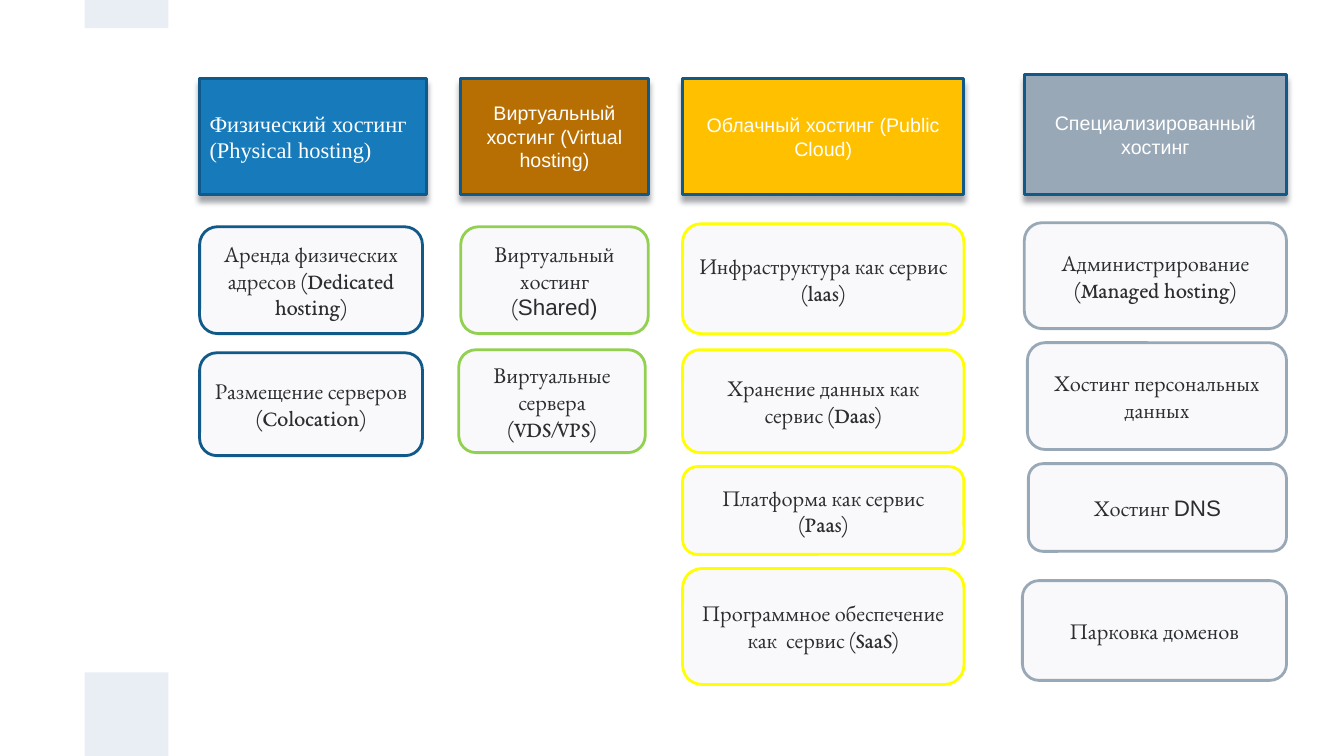
from dataclasses import dataclass

from lxml import etree
from pptx import Presentation
from pptx import util as u
from pptx.dml.color import RGBColor
from pptx.enum import shapes, text
from pptx.oxml.ns import qn

PX = 9144  # EMU in one px, 100 px to the inch


@dataclass(frozen=True)
class Theme:
    band: str = "E9EDF4"
    card: str = "F9F9FB"
    ink: str = "2C2D30"
    white: str = "FFFFFF"
    navy: str = "105988"
    blue: str = "177BBB"
    brown: str = "B76F04"
    amber: str = "FFC000"
    grey: str = "99A8B7"
    green: str = "92D050"
    yellow: str = "FFFF00"
    shadow: str = "70747C"
    sans: str = "Arial"
    serif: str = "EB Garamond"
    times: str = "Times New Roman"
    small: int = 14
    large: int = 16
    outline: int = 2


THEME = Theme()


@dataclass(frozen=True)
class Card:
    top: int  # measured from the top of the column
    height: int
    paragraphs: list  # each paragraph is a list of (text, font) runs
    indent: int = 0  # shift of the left edge
    trim: int = 0  # distance kept from the right edge


@dataclass(frozen=True)
class Column:
    box: tuple  # left, top, width, height of the heading
    heading: str
    fill: str
    outline: str
    cards: list
    font: str = THEME.sans
    size: int = THEME.small
    align: int = text.PP_ALIGN.CENTER


def serif(words):
    return words, THEME.serif


def sans(words):
    return words, THEME.sans


COLUMNS = [
    Column((198, 78, 225, 115), "Физический хостинг (Physical hosting)",
           THEME.blue, THEME.navy, [
               Card(147, 106, [[serif("Аренда физических адресов (Dedicated hosting)")]], trim=4),
               Card(272, 102, [[serif("Размещение серверов (Colocation)")]], trim=4),
           ], font=THEME.times, size=THEME.large, align=text.PP_ALIGN.LEFT),
    Column((457, 78, 186, 115), "Виртуальный хостинг (Virtual hosting)",
           THEME.brown, THEME.green, [
               Card(147, 106, [[serif("Виртуальный хостинг ("), sans("Shared)")]]),
               Card(269, 102, [[serif("Виртуальные сервера (VDS/VPS)")]], indent=-2, trim=3),
           ]),
    Column((677, 78, 279, 115), "Облачный хостинг (Public Cloud)",
           THEME.amber, THEME.yellow, [
               Card(144, 109, [[serif("Инфраструктура как сервис (laas)")]]),
               Card(269, 102, [[serif("Хранение данных как сервис (Daas)")]]),
               Card(385, 87, [[serif("Платформа как сервис (Paas)")]]),
               Card(486, 115, [[serif("Программное обеспечение как  сервис (SaaS)")]]),
           ]),
    Column((1016, 74, 260, 119), "Специализированный хостинг",
           THEME.grey, THEME.grey, [
               Card(147, 105, [[serif("Администрирование")], [serif("(Managed hosting)")]]),
               Card(266, 106, [[serif("Хостинг персональных данных")]], indent=3),
               Card(386, 87, [[serif("Хостинг "), sans("DNS")]], indent=4),
               Card(502, 99, [[serif("Парковка доменов")]], indent=-2),
           ]),
]


def add_box(slide, kind, box, fill, outline=None):
    shape = slide.shapes.add_shape(kind, *(length * PX for length in box))
    shape.shadow.inherit = False
    shape.fill.solid()
    shape.fill.fore_color.rgb = RGBColor.from_string(fill)
    if outline:
        shape.line.color.rgb = RGBColor.from_string(outline)
        shape.line.width = u.Pt(THEME.outline)
    else:
        shape.line.fill.background()
    return shape


def add_shadow(shape):
    effects = shape._element.spPr.find(qn("a:effectLst"))
    shadow = etree.SubElement(effects, qn("a:outerShdw"), blurRad=str(u.Pt(4)),
                              dist=str(u.Pt(4)), dir="5400000", rotWithShape="0")
    color = etree.SubElement(shadow, qn("a:srgbClr"), val=THEME.shadow)
    etree.SubElement(color, qn("a:alpha"), val="63000")


def write_text(shape, paragraphs, *, size, color, align=text.PP_ALIGN.CENTER):
    frame = shape.text_frame
    frame.word_wrap = True
    frame.vertical_anchor = text.MSO_ANCHOR.MIDDLE
    frame.margin_left = frame.margin_right = 10 * PX
    frame.margin_top = frame.margin_bottom = 5 * PX
    for index, runs in enumerate(paragraphs):
        paragraph = frame.add_paragraph() if index else frame.paragraphs[0]
        paragraph.alignment = align
        for words, font in runs:
            run = paragraph.add_run()
            run.text = words
            run.font.name = font
            run.font.size = u.Pt(size)
            run.font.color.rgb = RGBColor.from_string(color)


def add_bands(slide, box):
    """Pale blocks at the top and bottom of a vertical strip."""
    left, top, width, height = box
    for band_top, band_height in ((top, 28), (top + height - 83, 83)):
        add_box(slide, shapes.MSO_SHAPE.RECTANGLE,
                (left, band_top, width, band_height), THEME.band)


def add_column(slide, column):
    left, top, width, _ = column.box

    # Heading
    heading = add_box(slide, shapes.MSO_SHAPE.RECTANGLE, column.box, column.fill, THEME.navy)
    add_shadow(heading)
    write_text(heading, [[(column.heading, column.font)]], size=column.size,
               color=THEME.white, align=column.align)

    # Cards below the heading
    for card in column.cards:
        box = (left + card.indent, top + card.top,
               width - card.indent - card.trim, card.height)
        shape = add_box(slide, shapes.MSO_SHAPE.ROUNDED_RECTANGLE, box,
                        THEME.card, column.outline)
        write_text(shape, card.paragraphs, size=THEME.large, color=THEME.ink)


def main():
    presentation = Presentation()
    presentation.slide_width = 1333 * PX
    presentation.slide_height = 750 * PX
    slide = presentation.slides.add_slide(presentation.slide_layouts[6])
    add_bands(slide, (84, 0, 83, 750))
    for column in COLUMNS:
        add_column(slide, column)
    presentation.save("out.pptx")


if __name__ == "__main__":
    main()
